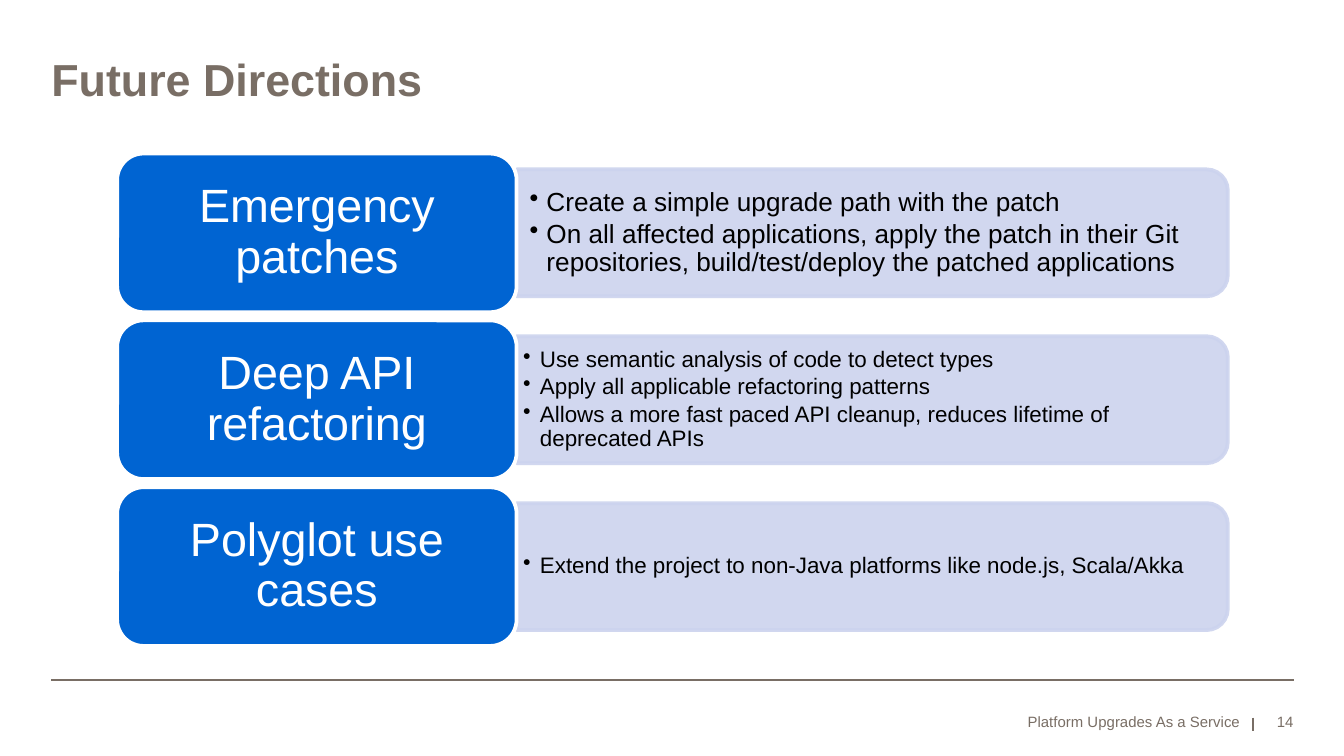
import pptx
import pptx.util
import pptx.oxml.ns
from lxml import etree
from pptx.dml.color import RGBColor
from pptx.enum.shapes import MSO_CONNECTOR, MSO_SHAPE
from pptx.enum.text import MSO_ANCHOR, MSO_AUTO_SIZE, PP_ALIGN

Pt = pptx.util.Pt
qn = pptx.oxml.ns.qn

COLORS = {
    "taupe": "796E65",
    "blue": "0064D2",
    "lavender": "CCD3EE",
    "black": "000000",
    "white": "FFFFFF",
}

# Label, bullet size, horizontal and vertical inset, bullets
DIRECTIONS = [
    ("Emergency patches", 14, 7, 3.5, [
        "Create a simple upgrade path with the patch",
        "On all affected applications, apply the patch in their Git "
        "repositories, build/test/deploy the patched applications",
    ]),
    ("Deep API refactoring", 12, 3.5, 1.75, [
        "Use semantic analysis of code to detect types",
        "Apply all applicable refactoring patterns",
        "Allows a more fast paced API cleanup, reduces lifetime of deprecated APIs",
    ]),
    ("Polyglot use cases", 12, 3.5, 1.75, [
        "Extend the project to non-Java platforms like node.js, Scala/Akka",
    ]),
]


def rgb(name):
    return RGBColor.from_string(COLORS[name])


def write_text(shape, paragraphs, size, color, bold=False, align=PP_ALIGN.LEFT,
               anchor=MSO_ANCHOR.TOP, insets=(0, 0, 0, 0), line_spacing=1.0,
               space_after=0, bullet_indent=0, font="Arial"):
    frame = shape.text_frame
    frame.word_wrap = True
    frame.auto_size = MSO_AUTO_SIZE.NONE
    frame.vertical_anchor = anchor
    (frame.margin_left, frame.margin_top,
     frame.margin_right, frame.margin_bottom) = map(Pt, insets)
    for index, text in enumerate(paragraphs):
        paragraph = frame.add_paragraph() if index else frame.paragraphs[0]
        paragraph.text = text
        paragraph.alignment = align
        paragraph.line_spacing = line_spacing
        paragraph.space_after = Pt(space_after)
        if bullet_indent:
            paragraph.level = 1
            properties = paragraph._p.get_or_add_pPr()
            properties.set("marL", str(Pt(bullet_indent)))
            properties.set("indent", str(-Pt(bullet_indent)))
            etree.SubElement(properties, qn("a:buChar"), char="•")
        paragraph.font.name = font
        paragraph.font.size = Pt(size)
        paragraph.font.bold = bold
        paragraph.font.color.rgb = rgb(color)


class SlideBuilder:
    def __init__(self, slide):
        self.slide = slide
        self.shapes = slide.shapes

    def title(self, text, box, **style):
        heading = self.shapes.title
        heading.left, heading.top, heading.width, heading.height = map(Pt, box)
        write_text(heading, [text], **style)

    def text(self, paragraphs, box, **style):
        write_text(self.shapes.add_textbox(*map(Pt, box)), paragraphs, **style)

    def block(self, kind, box, fill, outline, rotation=0, opacity=None):
        block = self.shapes.add_shape(kind, *map(Pt, box))
        block.shadow.inherit = False
        block.rotation = rotation
        block.fill.solid()
        block.fill.fore_color.rgb = rgb(fill)
        block.line.color.rgb = rgb(outline)
        block.line.width = Pt(2)
        if opacity is not None:
            for color in block._element.spPr.iter(qn("a:srgbClr")):
                etree.SubElement(color, qn("a:alpha"), val=str(opacity * 1000))
        return block

    def rule(self, x1, y1, x2, y2):
        rule = self.shapes.add_connector(
            MSO_CONNECTOR.STRAIGHT, *map(Pt, (x1, y1, x2, y2)))
        rule.line.color.rgb = rgb("taupe")
        rule.line.width = Pt(1)
        etree.SubElement(rule._element.spPr, qn("a:effectLst"))


def main():
    deck = pptx.Presentation()
    deck.slide_width, deck.slide_height = Pt(720), Pt(405)
    builder = SlideBuilder(deck.slides.add_slide(deck.slide_layouts[5]))

    # Title
    builder.title("Future Directions", (27.5, 27.5, 665, 55),
                  size=24, color="taupe", bold=True)

    # Footer
    builder.rule(27.5, 364.5, 693, 364.5)
    builder.rule(671.25, 384.5, 671.25, 391.75)
    for text, left, width in [("Platform Upgrades As a Service", 401, 263.5),
                              ("14", 671.5, 21.5)]:
        builder.text([text], (left, 376.5, width, 15), size=8, color="taupe",
                     align=PP_ALIGN.RIGHT, anchor=MSO_ANCHOR.BOTTOM,
                     insets=(0, 3.5, 0, 0))

    # Directions: a label on the left, its bullets in a panel on the right
    first_top, pitch = 82.25, 89.4
    label_left, label_width, label_height = 62.75, 214, 85
    panel_left, panel_width, panel_height = 276.75, 381, 68
    for row, (label, size, inset_x, inset_y, bullets) in enumerate(DIRECTIONS):
        top = first_top + row * pitch
        middle = top + label_height / 2

        # The panel is a quarter-turned shape, so width and height swap
        builder.block(MSO_SHAPE.ROUND_2_SAME_RECTANGLE,
                      (panel_left + (panel_width - panel_height) / 2,
                       middle - panel_width / 2, panel_height, panel_width),
                      fill="lavender", outline="lavender", rotation=90, opacity=90)
        builder.text(bullets, (panel_left, middle - 30.75, 377.5, 61.5),
                     size=size, color="black", anchor=MSO_ANCHOR.MIDDLE,
                     insets=(inset_x, inset_y, inset_x, inset_y),
                     line_spacing=0.9, space_after=0.15 * size, bullet_indent=9)

        name = builder.block(MSO_SHAPE.ROUNDED_RECTANGLE,
                             (label_left, top, label_width, label_height),
                             fill="blue", outline="white")
        write_text(name, [label], size=25, color="white", align=PP_ALIGN.CENTER,
                   anchor=MSO_ANCHOR.MIDDLE, insets=(7, 3.5, 7, 3.5),
                   line_spacing=0.9)

    deck.save("out.pptx")


if __name__ == "__main__":
    main()
